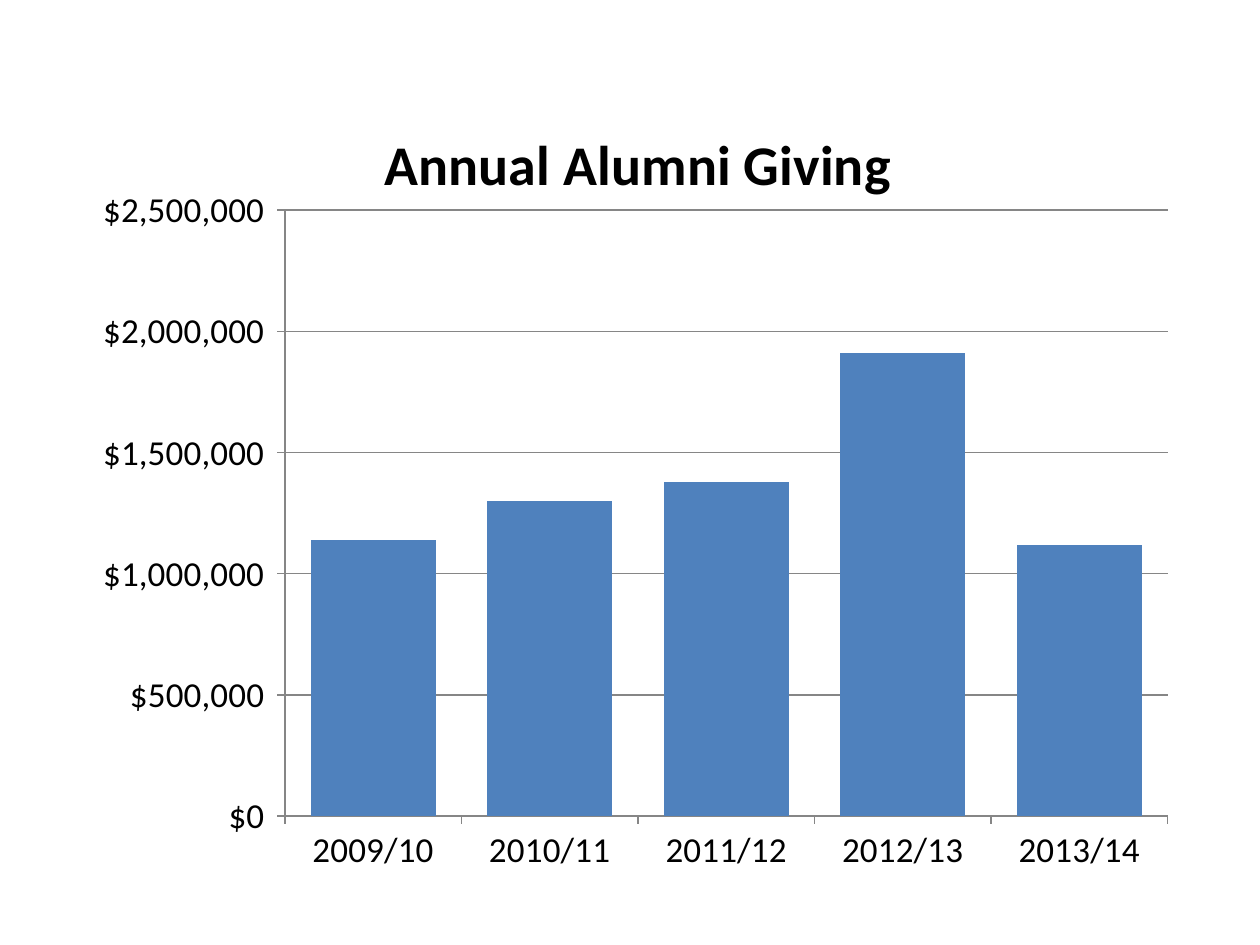
from lxml.etree import SubElement
from pptx import Presentation
from pptx.chart.data import CategoryChartData
from pptx.dml.color import RGBColor
from pptx.enum.chart import XL_CHART_TYPE, XL_TICK_MARK
from pptx.oxml.ns import qn
from pptx.util import Cm, Pt

COLORS = {"text": "000000", "bar": "4F81BD", "line": "868686"}
MONEY = '"$"#,##0_);\\("$"#,##0\\)'


def place(parent, index, **spots):
    for old in parent.findall(qn("c:layout")):
        parent.remove(old)
    layout = SubElement(parent, qn("c:layout"))
    parent.insert(index, layout)
    manual = SubElement(layout, qn("c:manualLayout"))
    for tag, value in spots.items():
        SubElement(manual, qn(f"c:{tag}")).set("val", str(value))


class Deck:
    font = "Calibri"

    def __init__(self, width, height):
        self.deck = Presentation()
        self.deck.slide_width, self.deck.slide_height = width, height
        self.slide = None

    def color(self, name):
        return RGBColor.from_string(COLORS[name])

    def add_slide(self):
        self.slide = self.deck.slides.add_slide(self.deck.slide_layouts[6])

    def style(self, font, size, bold=False):
        font.name, font.size, font.bold = self.font, Pt(size), bold
        font.color.rgb = self.color("text")

    def rule(self, line):
        line.color.rgb = self.color("line")
        line.width = Pt(0.75)

    def columns(self, title, name, data, box):
        source = CategoryChartData(number_format=MONEY)
        source.categories = list(data)
        source.add_series(name, list(data.values()))
        chart = self.slide.shapes.add_chart(
            XL_CHART_TYPE.COLUMN_CLUSTERED, *box, source).chart
        self.style(chart.font, 20)
        chart.has_legend = False
        self.heading(chart, title)
        self.axes(chart)
        plot = chart.plots[0]
        plot.gap_width = 41
        plot.vary_by_categories = False
        fill = plot.series[0].format.fill
        fill.solid()
        fill.fore_color.rgb = self.color("bar")
        area = chart.element.find(f".//{qn('c:plotArea')}")
        place(area, 0, layoutTarget="inner", xMode="edge", yMode="edge",
              x=0.19, y=0.167, w=0.793, h=0.74)

    def heading(self, chart, text):
        chart.has_title = True
        title = chart.chart_title
        title.text_frame.text = text
        self.style(title.text_frame.paragraphs[0].font, 32, True)
        title.include_in_layout = False
        place(title.element if hasattr(title, "element") else title._element,
              1, xMode="edge", yMode="edge", x=0.27, y=0.05)

    def axes(self, chart):
        for axis in (chart.category_axis, chart.value_axis):
            axis.major_tick_mark = XL_TICK_MARK.OUTSIDE
            axis.minor_tick_mark = XL_TICK_MARK.NONE
            self.rule(axis.format.line)
        axis = chart.value_axis
        axis.minimum_scale, axis.maximum_scale = 0, 2500000
        axis.major_unit = 500000
        axis.tick_labels.number_format = MONEY
        axis.tick_labels.number_format_is_linked = False
        axis.has_major_gridlines = True
        self.rule(axis.major_gridlines.format.line)


def main():
    deck = Deck(Cm(25.4), Cm(19.05))
    deck.add_slide()
    giving = {"2009/10": 1140000, "2010/11": 1300000, "2011/12": 1380000,
              "2012/13": 1910000, "2013/14": 1120000}
    deck.columns("Annual Alumni Giving", "Series 1", giving,
                 (Cm(1.48), Cm(1.48), Cm(22.44), Cm(16.51)))
    deck.deck.save("out.pptx")


if __name__ == "__main__":
    main()
